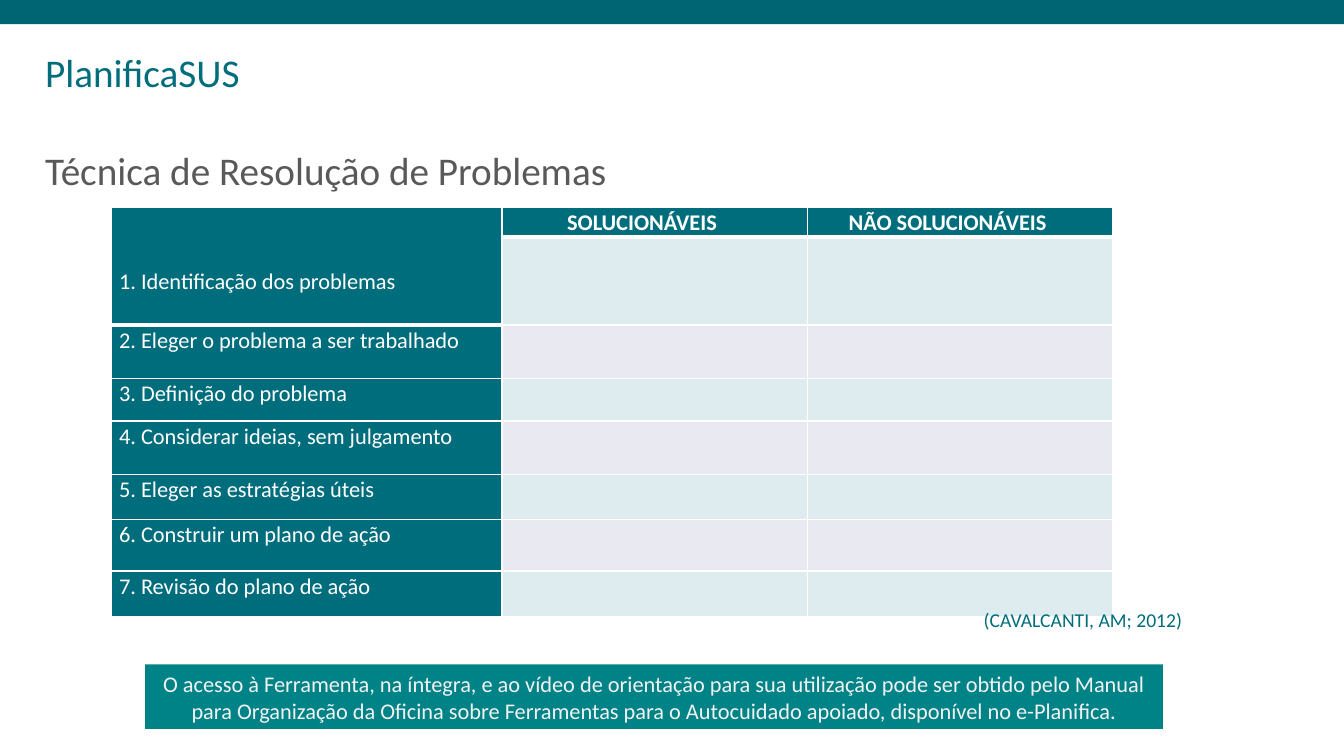
from dataclasses import dataclass

from lxml.etree import SubElement
from pptx import Presentation
from pptx.dml.color import RGBColor
from pptx.enum.shapes import MSO_SHAPE as Preset
from pptx.enum.text import MSO_ANCHOR as Anchor, PP_ALIGN as Align
from pptx.oxml.ns import qn
from pptx.slide import Slide
from pptx.table import _Cell as Cell
from pptx.text.text import TextFrame
from pptx.util import Cm, Pt

COLORS = {
    "bar": "006573",
    "teal": "006D7C",
    "note": "008387",
    "gray": "595959",
    "white": "FFFFFF",
    "pale": "F2F2F2",
    "odd_row": "DEECEF",
    "even_row": "E9EAF1",
}
FONT = "Calibri"
SLIDE_WIDTH, SLIDE_HEIGHT = 33.87, 19.05

TABLE_LEFT, TABLE_TOP = 2.82, 5.23
COLUMN_WIDTHS = [9.83, 7.7, 7.7]
HEADER_HEIGHT = 0.71
HEADERS = ["SOLUCIONÁVEIS", "NÃO SOLUCIONÁVEIS"]
SIDE_MARGIN = 0.18
HEADER_RIGHT_MARGIN = 0.82
FIRST_STEP_TOP_MARGIN = 1.48


@dataclass
class Label:
    text: str
    left: float
    top: float
    width: float
    height: float
    size: int
    color: str
    wrap: bool = False
    anchor: Anchor = Anchor.TOP
    line_spacing: float = 1.0


@dataclass
class Step:
    text: str
    height: float


LABELS = [
    Label("PlanificaSUS", 0.89, 1.09, 5.46, 1.45, 28, "teal"),
    Label("Técnica de Resolução de Problemas", 0.89, 2.51, 27.91, 3.68, 28, "gray",
          wrap=True, anchor=Anchor.MIDDLE, line_spacing=0.9),
    Label("(CAVALCANTI, AM; 2012)", 24.54, 15.19, 5.66, 0.86, 14, "teal"),
]
STEPS = [
    Step("1. Identificação dos problemas", 2.13),
    Step("2. Eleger o problema a ser trabalhado", 1.34),
    Step("3. Definição do problema", 1.08),
    Step("4. Considerar ideias, sem julgamento", 1.34),
    Step("5. Eleger as estratégias úteis", 1.14),
    Step("6. Construir um plano de ação", 1.3),
    Step("7. Revisão do plano de ação", 1.14),
]
NOTE = (
    "O acesso à Ferramenta, na íntegra, e ao vídeo de orientação para sua utilização "
    "pode ser obtido pelo Manual para Organização da Oficina sobre Ferramentas para o "
    "Autocuidado apoiado, disponível no e-Planifica."
)


def color(name: str) -> RGBColor:
    return RGBColor.from_string(COLORS[name])


def write(frame: TextFrame, text: str, size: int, color_name: str,
          align: Align = Align.LEFT, line_spacing: float = 1.0, bold: bool = False) -> None:
    paragraph = frame.paragraphs[0]
    paragraph.alignment = align
    paragraph.line_spacing = line_spacing
    run = paragraph.add_run()
    run.text = text
    run.font.name = FONT
    run.font.size = Pt(size)
    run.font.bold = bold
    run.font.color.rgb = color(color_name)


def add_label(slide: Slide, label: Label) -> None:
    box = slide.shapes.add_textbox(
        Cm(label.left), Cm(label.top), Cm(label.width), Cm(label.height))
    frame = box.text_frame
    frame.word_wrap = label.wrap
    frame.vertical_anchor = label.anchor
    write(frame, label.text, label.size, label.color, line_spacing=label.line_spacing)


def add_rectangle(slide: Slide, left: float, top: float, width: float, height: float,
                  fill: str) -> TextFrame:
    """Draw a plain filled rectangle and return its text frame."""
    shape = slide.shapes.add_shape(
        Preset.RECTANGLE, Cm(left), Cm(top), Cm(width), Cm(height))
    shape.shadow.inherit = False
    shape.fill.solid()
    shape.fill.fore_color.rgb = color(fill)
    shape.line.fill.background()
    shape.text_frame.word_wrap = True
    return shape.text_frame


def style_cell(cell: Cell, fill: str, bottom_width: int = 1, has_top: bool = False) -> None:
    """Give a cell its fill and white borders; inner top edges come from the row above."""
    widths = {"a:lnL": 1, "a:lnR": 1}
    if has_top:
        widths["a:lnT"] = 1
    widths["a:lnB"] = bottom_width
    properties = cell._tc.get_or_add_tcPr()
    for tag, width in widths.items():
        line = SubElement(properties, qn(tag), w=str(Pt(width)))
        solid = SubElement(line, qn("a:solidFill"))
        SubElement(solid, qn("a:srgbClr"), val=COLORS["white"])
    cell.fill.solid()
    cell.fill.fore_color.rgb = color(fill)


def write_cell(cell: Cell, text: str, align: Align, bold: bool = False,
               top: float = 0, right: float = SIDE_MARGIN) -> None:
    cell.margin_left, cell.margin_right = Cm(SIDE_MARGIN), Cm(right)
    cell.margin_top, cell.margin_bottom = Cm(top), Cm(0)
    write(cell.text_frame, text, 16, "white", align, 1.07, bold)


def add_steps_table(slide: Slide) -> None:
    heights = [HEADER_HEIGHT] + [step.height for step in STEPS]
    frame = slide.shapes.add_table(
        len(heights), len(COLUMN_WIDTHS), Cm(TABLE_LEFT), Cm(TABLE_TOP),
        Cm(sum(COLUMN_WIDTHS)), Cm(sum(heights)))
    table = frame.table
    table.first_row = table.horz_banding = False
    for column, width in zip(table.columns, COLUMN_WIDTHS):
        column.width = Cm(width)
    for row, height in zip(table.rows, heights):
        row.height = Cm(height)

    first_cell = table.cell(0, 0)
    first_cell.merge(table.cell(1, 0))
    for row in range(len(heights)):
        band = "odd_row" if row % 2 else "even_row"
        for column in range(len(COLUMN_WIDTHS)):
            is_heading = row == 0 or column == 0
            is_thick = row == 0 or (row, column) == (1, 0)
            style_cell(table.cell(row, column), "teal" if is_heading else band,
                       bottom_width=3 if is_thick else 1, has_top=row == 0)

    for column, header in enumerate(HEADERS, start=1):
        write_cell(table.cell(0, column), header, Align.CENTER, bold=True,
                   right=HEADER_RIGHT_MARGIN)
    write_cell(first_cell, STEPS[0].text, Align.JUSTIFY, top=FIRST_STEP_TOP_MARGIN)
    for row, step in enumerate(STEPS[1:], start=2):
        write_cell(table.cell(row, 0), step.text, Align.JUSTIFY)


def main() -> None:
    presentation = Presentation()
    presentation.slide_width = Cm(SLIDE_WIDTH)
    presentation.slide_height = Cm(SLIDE_HEIGHT)
    slide = presentation.slides.add_slide(presentation.slide_layouts[6])

    add_rectangle(slide, 0, 0, SLIDE_WIDTH, 0.61, "bar")
    add_steps_table(slide)
    for label in LABELS:
        add_label(slide, label)
    note_frame = add_rectangle(slide, 3.66, 16.74, 25.65, 1.63, "note")
    write(note_frame, NOTE, 16, "pale", Align.CENTER)

    presentation.save("out.pptx")


if __name__ == "__main__":
    main()
